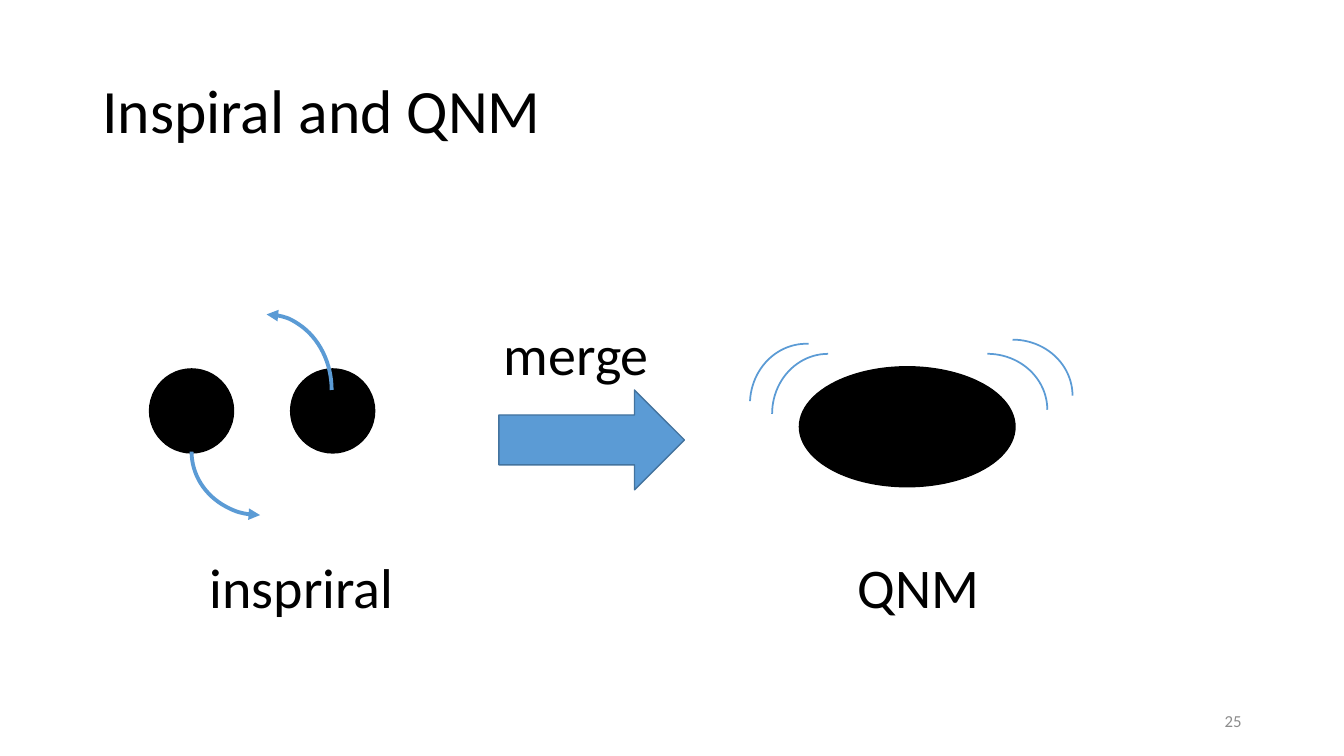
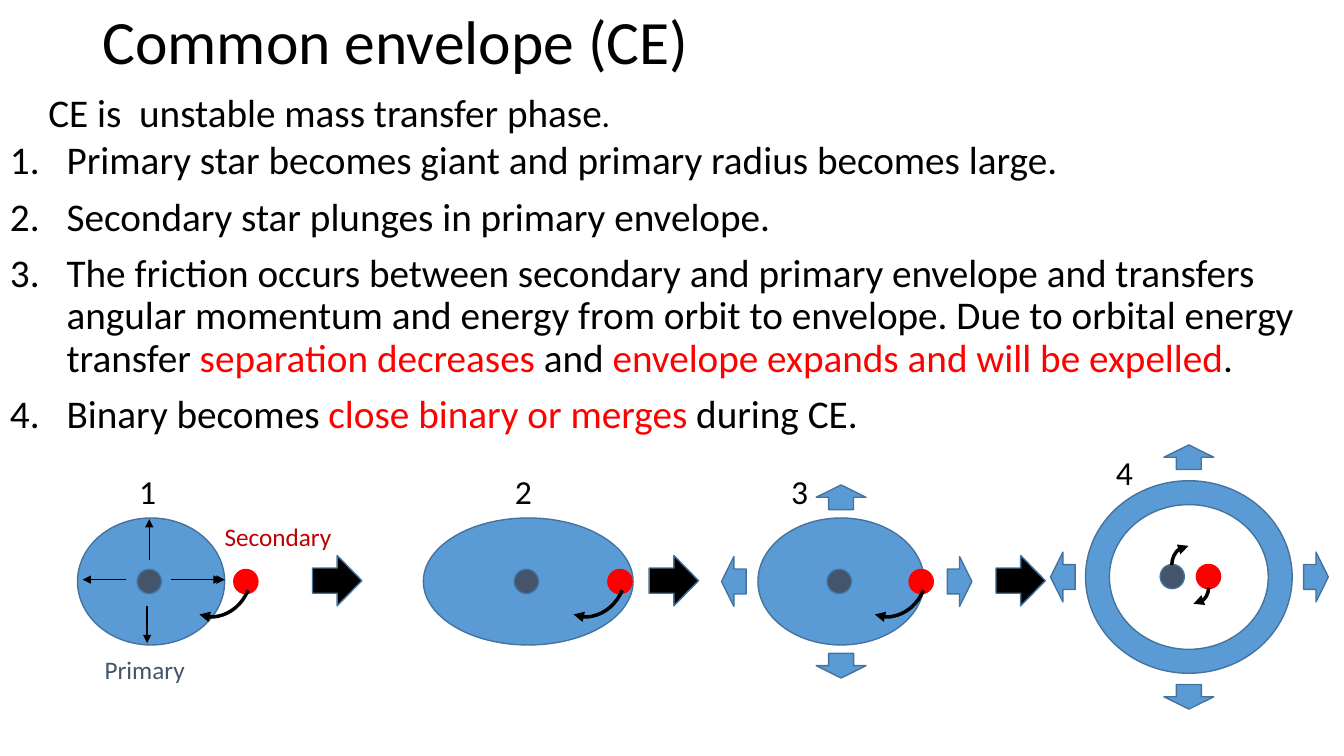
from dataclasses import dataclass

from lxml import etree
from pptx import Presentation
from pptx.dml.color import RGBColor
from pptx.enum import shapes, text
from pptx.oxml import ns
from pptx.util import Pt

KIND = shapes.MSO_SHAPE
ALIGN = text.PP_ALIGN


@dataclass(frozen=True)
class Theme:
    font: str = "Calibri"
    black: str = "000000"
    blue: str = "5B9BD5"
    outline: str = "43739E"
    slate: str = "44546A"
    red: str = "FF0000"
    dark_red: str = "C00000"
    grey: str = "8C8C8C"
    title_size: float = 44
    caption_size: float = 40
    body_size: float = 28
    stage_size: float = 24
    label_size: float = 18
    number_size: float = 12
    line_spacing: float = 0.9


THEME = Theme()
DOT = 17.3
STAGE_TOP, STAGE_HEIGHT = 370, 90.7

STEPS = [
    [("Primary star becomes giant and primary radius becomes large.", THEME.black)],
    [("Secondary star plunges in primary envelope.", THEME.black)],
    [("The friction occurs between secondary and primary envelope and transfers angular "
      "momentum and energy from orbit to envelope. Due to orbital energy transfer",
      THEME.black),
     (" separation decreases ", THEME.red),
     ("and ", THEME.black),
     ("envelope expands and will be expelled", THEME.red),
     (".", THEME.black)],
    [("Binary becomes ", THEME.black),
     ("close binary or merges ", THEME.red),
     ("during CE.", THEME.black)],
]


def points(*values):
    return [Pt(value) for value in values]


def format_run(run, size, color=THEME.black):
    run.font.name = THEME.font
    run.font.size = Pt(size)
    run.font.color.rgb = RGBColor.from_string(color)


def format_line(line, color, width, head=False, tail=False):
    line.color.rgb = RGBColor.from_string(color)
    line.width = Pt(width)
    for wanted, tag in ((head, "a:headEnd"), (tail, "a:tailEnd")):
        if wanted:
            etree.SubElement(line._get_or_add_ln(), ns.qn(tag), type="triangle")


def add_shape(slide, kind, box, fill, outline=THEME.outline, rotation=0):
    shape = slide.shapes.add_shape(kind, *points(*box))
    shape.shadow.inherit = False
    shape.rotation = rotation
    shape.fill.solid()
    shape.fill.fore_color.rgb = RGBColor.from_string(fill)
    format_line(shape.line, outline, 1)
    return shape


def add_arc(slide, box, color, width, rotation=0, head=False, tail=False):
    arc = slide.shapes.add_shape(KIND.ARC, *points(*box))
    arc.shadow.inherit = False
    arc.rotation = rotation
    arc.fill.background()
    format_line(arc.line, color, width, head, tail)


def add_arrow_line(slide, start, end):
    connector = slide.shapes.add_connector(
        shapes.MSO_CONNECTOR.STRAIGHT, *points(*start, *end))
    format_line(connector.line, THEME.black, 1, tail=True)
    etree.SubElement(connector._element.spPr, ns.qn("a:effectLst"))


def add_label(slide, wording, box, size, color=THEME.black, align=ALIGN.LEFT):
    label = slide.shapes.add_textbox(*points(*box))
    label.text_frame.word_wrap = True
    label.text_frame.text = wording
    paragraph = label.text_frame.paragraphs[0]
    paragraph.alignment = align
    format_run(paragraph.runs[0], size, color)
    return label


def add_titled_slide(presentation, wording, top, height):
    slide = presentation.slides.add_slide(presentation.slide_layouts[5])
    title = slide.shapes.title
    title.left, title.top, title.width, title.height = points(66, top, 828, height)
    frame = title.text_frame
    frame.text = wording
    frame.auto_size = text.MSO_AUTO_SIZE.NONE
    frame.vertical_anchor = text.MSO_ANCHOR.MIDDLE
    paragraph = frame.paragraphs[0]
    paragraph.alignment = ALIGN.LEFT
    paragraph.line_spacing = THEME.line_spacing
    format_run(paragraph.runs[0], THEME.title_size)
    return slide


def add_slide_number(slide, wording):
    number = add_label(slide, wording, (678, 500.5, 216, 28.8), THEME.number_size,
                       THEME.grey, ALIGN.RIGHT)
    number.text_frame.vertical_anchor = text.MSO_ANCHOR.MIDDLE


def draw_inspiral(slide, left, top):
    """Two black holes circling each other, with the caption below."""
    for offset in (0, 100.8):
        add_shape(slide, KIND.OVAL, (left + offset, top, 60, 60),
                  THEME.black, THEME.black)
    add_arc(slide, (left + 37.2, top - 38.9, 92.9, 108), THEME.blue, 2.75, head=True)
    add_arc(slide, (left + 30, top + 13.7, 97.9, 90.7), THEME.blue, 2.75, 180, head=True)
    add_label(slide, "inspriral", (left + 35.8, top + 127.5, 178.6, 55.4),
              THEME.caption_size)


def draw_merge_arrow(slide, left, top):
    add_shape(slide, KIND.RIGHT_ARROW, (left, top, 132.5, 71.3), THEME.blue)
    add_label(slide, "merge", (left - 3.6, top - 54, 150.5, 55.4), THEME.caption_size)


def draw_ringdown(slide, left, top):
    """The merged black hole with waves on both sides, and the caption below."""
    add_shape(slide, KIND.OVAL, (left, top, 154, 85.7), THEME.black, THEME.black)
    waves = [(91.4, -9.3, 0), (109.4, -19.4, 0), (-22.4, -6.4, 270), (-38.2, -13.6, 272.6)]
    for across, down, rotation in waves:
        add_arc(slide, (left + across, top + down, 85.7, 79.9), THEME.blue, 1.25, rotation)
    add_label(slide, "QNM", (left + 34.5, top + 129, 221, 55.4), THEME.caption_size)


def add_steps(slide, box):
    frame = slide.shapes.add_textbox(*points(*box)).text_frame
    frame.word_wrap = True
    for index, parts in enumerate(STEPS):
        paragraph = frame.add_paragraph() if index else frame.paragraphs[0]
        paragraph.line_spacing = THEME.line_spacing
        paragraph.space_before = Pt(10)
        properties = paragraph._p.get_or_add_pPr()
        properties.set("marL", str(Pt(40.5)))
        properties.set("indent", str(-Pt(40.5)))
        etree.SubElement(properties, ns.qn("a:buFont"), typeface="+mj-lt")
        etree.SubElement(properties, ns.qn("a:buAutoNum"), type="arabicPeriod")
        for wording, color in parts:
            run = paragraph.add_run()
            run.text = wording
            format_run(run, THEME.body_size, color)


def add_stage_number(slide, wording, left, top):
    add_label(slide, wording, (left, top, 56.9, 36), THEME.stage_size)


def add_star(slide, left, top, color, outline):
    add_shape(slide, KIND.OVAL, (left, top, DOT, DOT), color, outline)


def draw_stage(slide, number, box, number_offset, companion_offset):
    """An envelope with its core and a companion moving along an arc."""
    left, top, width, height = box
    add_shape(slide, KIND.OVAL, box, THEME.blue)
    add_star(slide, left + (width - DOT) / 2 - 1.3, top + (height - DOT) / 2,
             THEME.slate, THEME.outline)
    companion_left, companion_top = left + companion_offset, top + 36.8
    add_star(slide, companion_left, companion_top, THEME.red, THEME.red)
    add_arc(slide, (companion_left - 42.6, companion_top - 20.4, 58.3, 51.1),
            THEME.black, 2.5, 112.3, tail=True)
    add_stage_number(slide, number, left + number_offset, top - 37.4)


def draw_growth(slide, box):
    """Thin arrows from the core to the envelope's edge, and the star names."""
    left, top, width, height = box
    middle = top + 44
    for start, end in ((72, 103), (34.6, 3.6), (67, 105.2)):
        add_arrow_line(slide, (left + start, middle), (left + end, middle))
    for across, start, end in ((51.2, 30.3, 0.8), (49.7, 62.7, 89.4)):
        add_arrow_line(slide, (left + across, top + start), (left + across, top + end))
    add_label(slide, "Primary", (left + 12.3, top + height + 3, 198.7, 51),
              THEME.label_size, THEME.slate)
    add_label(slide, "Secondary", (left + width - 7.1, top - 1.4, 198.7, 51),
              THEME.label_size, THEME.dark_red)


def draw_outflow(slide, box, left_gap, right_gap, vertical_gap):
    """Block arrows pointing away from each side; gaps run to the arrow centres."""
    left, top, width, height = box
    across, down = left + width / 2, top + height / 2
    arrows = [
        (left + width + right_gap, down, 0),
        (across, top + height + vertical_gap, 90),
        (left - left_gap, down, 180),
        (across, top - vertical_gap, 270),
    ]
    for center_x, center_y, rotation in arrows:
        add_shape(slide, KIND.RIGHT_ARROW, (center_x - 8.8, center_y - 17.8, 17.6, 35.6),
                  THEME.blue, rotation=rotation)


def draw_expelled_stage(slide, box):
    """A ring of expelled envelope around the close binary."""
    left, top = box[:2]
    ring = add_shape(slide, KIND.DONUT, box, THEME.blue)
    ring.adjustments[0] = 0.124
    add_star(slide, left + 53.3, top + 59.8, THEME.slate, THEME.outline)
    add_star(slide, left + 79.2, top + 59.8, THEME.red, THEME.red)
    add_arc(slide, (left + 59.8, top + 48.3, 27.4, 23.8), THEME.black, 2.5, 270, tail=True)
    add_arc(slide, (left + 65.6, top + 65.6, 23, 21.6), THEME.black, 2.5, 90, tail=True)
    draw_outflow(slide, box, 16.2, 17, 16.8)
    add_stage_number(slide, "4", left + 14.6, top - 24.4)


def build_inspiral_slide(presentation):
    slide = add_titled_slide(presentation, "Inspiral and QNM", 28.8, 104.4)
    draw_inspiral(slide, 106.8, 263.5)
    draw_merge_arrow(slide, 356.4, 278.6)
    draw_ringdown(slide, 571, 262)
    add_slide_number(slide, "25")


def build_envelope_slide(presentation):
    slide = add_titled_slide(presentation, "Common envelope (CE)", 0, 63.4)
    intro = add_label(slide, "CE is  unstable mass transfer phase",
                      (27.4, 59.8, 872.6, 41), THEME.body_size)
    full_stop = intro.text_frame.paragraphs[0].add_run()
    full_stop.text = "."
    format_run(full_stop, THEME.stage_size)
    add_steps(slide, (0, 97.2, 960, 442.8))

    giant, plunge, friction = [
        (left, STAGE_TOP, width, STAGE_HEIGHT)
        for left, width in ((55.4, 105.1), (302.4, 149.8), (541.4, 118.8))]
    draw_stage(slide, "1", giant, 36.8, 111.6)
    draw_growth(slide, giant)
    draw_stage(slide, "2", plunge, 58.3, 131.8)
    draw_stage(slide, "3", friction, 16.6, 108)
    draw_outflow(slide, friction, 17.2, 25.2, 14.8)
    draw_expelled_stage(slide, (775.4, 343.4, 147.6, 137.5))
    for left in (223.2, 463.7, 711.4):
        add_shape(slide, KIND.RIGHT_ARROW, (left, 396.8, 35.3, 36), THEME.black)


def main():
    presentation = Presentation()
    presentation.slide_width, presentation.slide_height = points(960, 540)
    build_inspiral_slide(presentation)
    build_envelope_slide(presentation)
    presentation.save("out.pptx")


if __name__ == "__main__":
    main()
